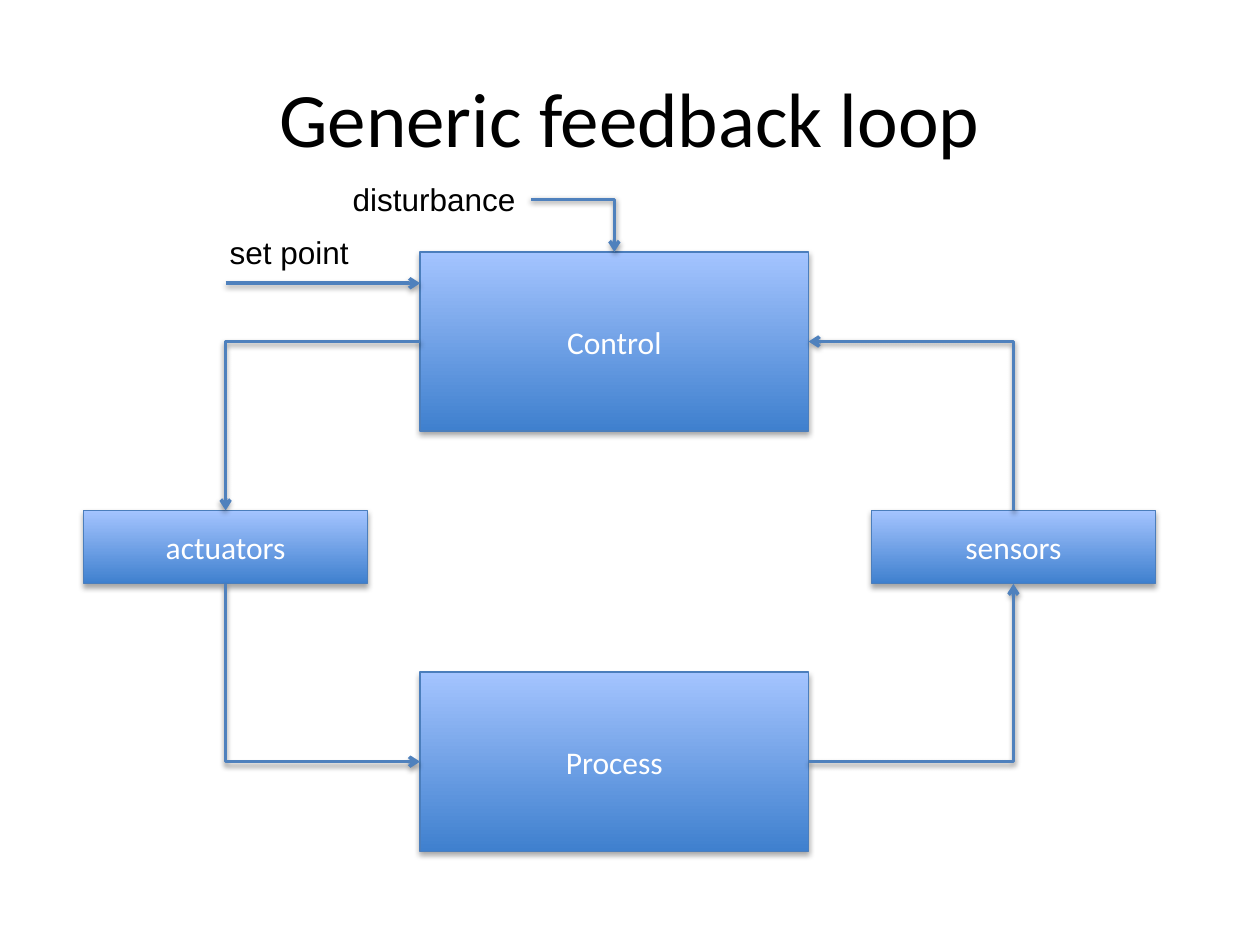
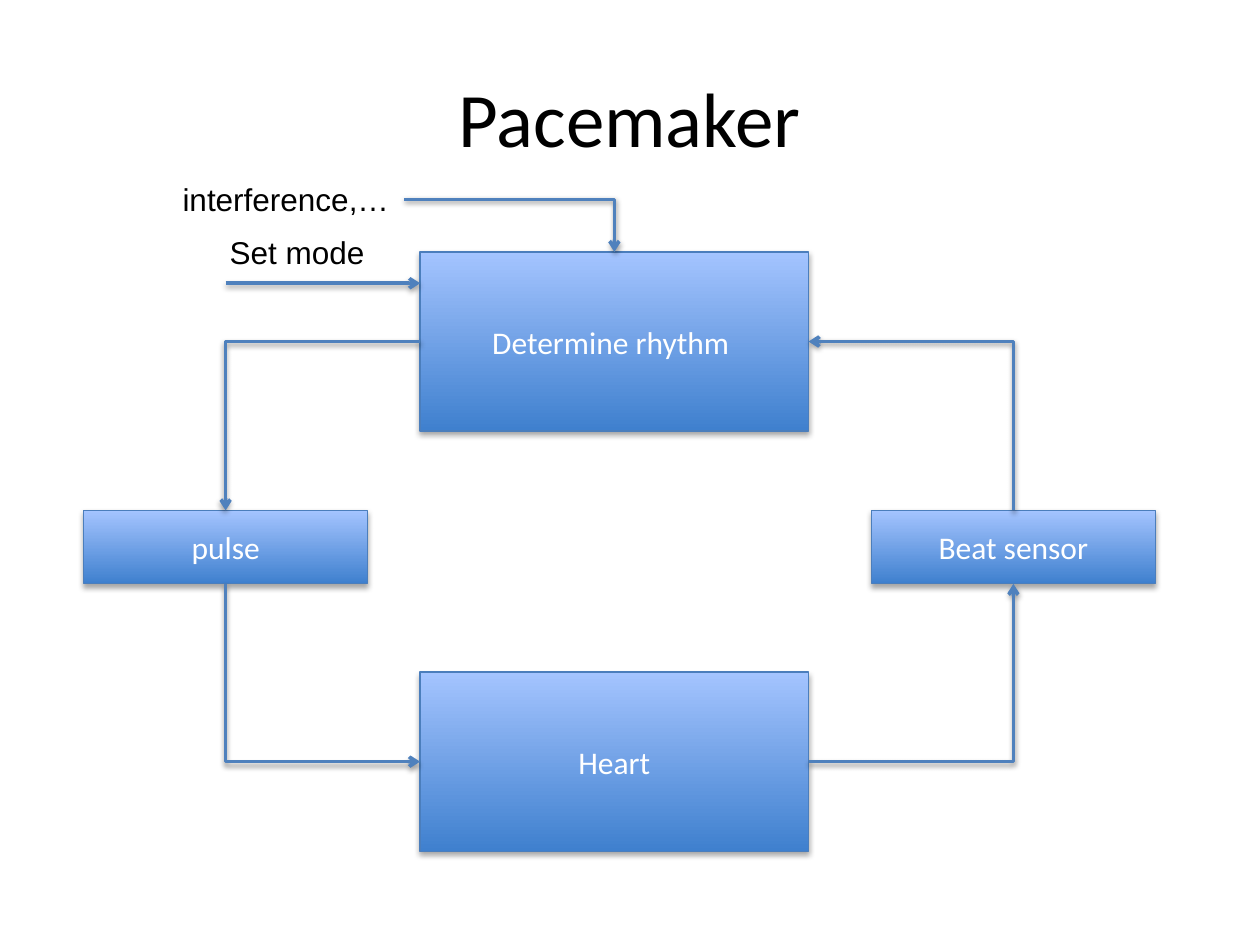
from dataclasses import dataclass

from lxml.etree import SubElement
from pptx import Presentation
from pptx.dml.color import RGBColor as RGB
from pptx.enum.shapes import MSO_CONNECTOR as Link, MSO_SHAPE as Shape
from pptx.enum.text import MSO_ANCHOR as Anchor, MSO_AUTO_SIZE as AutoSize, PP_ALIGN as Align
from pptx.oxml.ns import qn
from pptx.util import Cm, Pt


@dataclass(frozen=True)
class Theme:
    ink: RGB = RGB(0, 0, 0)
    box_text: RGB = RGB(255, 255, 255)
    box_bottom: RGB = RGB.from_string("3F80CE")
    box_top: RGB = RGB.from_string("A4C4FF")
    box_line: RGB = RGB.from_string("4B7EBC")
    arrow: RGB = RGB.from_string("4F81BD")
    heading_font: str = "Calibri"
    label_font: str = "Arial"
    title_size: Pt = Pt(44)
    text_size: Pt = Pt(18)


theme = Theme()
TOP, LEFT, BOTTOM, RIGHT = range(4)


def write(shape, text, font, size, color, align=Align.LEFT, anchor=Anchor.TOP):
    frame = shape.text_frame
    frame.vertical_anchor = anchor
    frame.word_wrap = True
    paragraph = frame.paragraphs[0]
    paragraph.text = text
    paragraph.alignment = align
    paragraph.font.name = font
    paragraph.font.size = size
    paragraph.font.color.rgb = color
    return frame


def add_shadow(properties, distance, opacity):
    effects = properties.find(qn("a:effectLst"))
    if effects is None:
        effects = SubElement(properties, qn("a:effectLst"))
    shadow = SubElement(effects, qn("a:outerShdw"), blurRad="40000", dist=str(distance),
                        dir="5400000", rotWithShape="0")
    color = SubElement(shadow, qn("a:srgbClr"), val="000000")
    SubElement(color, qn("a:alpha"), val=str(opacity * 1000))


box_places = {
    "process": (8.47, 13.55, 7.83, 3.61),
    "control": (8.47, 5.08, 7.83, 3.61),
    "actuators": (1.69, 10.29, 5.72, 1.48),
    "sensors": (17.57, 10.29, 5.72, 1.48),
}

loop_links = [
    ("control", LEFT, "actuators", TOP, "tailEnd"),
    ("process", LEFT, "actuators", BOTTOM, "headEnd"),
    ("process", RIGHT, "sensors", BOTTOM, "tailEnd"),
    ("control", RIGHT, "sensors", TOP, "headEnd"),
]

loops = [
    {
        "title": "Generic feedback loop",
        "boxes": {"process": "Process", "control": "Control",
                  "actuators": "actuators", "sensors": "sensors"},
        "set_point": ("set point", 2.95),
        "disturbance": ("disturbance", 6.86, 3.84),
    },
    {
        "title": "Pacemaker",
        "boxes": {"process": "Heart", "control": "Determine rhythm ",
                  "actuators": "pulse", "sensors": "Beat sensor"},
        "set_point": ("Set mode", 3.25),
        "disturbance": ("interference,…", 3.43, 4.72),
    },
]

deck = Presentation()
deck.slide_width, deck.slide_height = Cm(25.4), Cm(19.05)

for loop in loops:
    slide = deck.slides.add_slide(deck.slide_layouts[6])
    shapes = slide.shapes

    title = shapes.add_textbox(Cm(1.27), Cm(0.76), Cm(22.86), Cm(3.18))
    write(title, loop["title"], theme.heading_font, theme.title_size, theme.ink,
          Align.CENTER, Anchor.MIDDLE)

    boxes = {}
    for part, text in loop["boxes"].items():
        box = shapes.add_shape(Shape.RECTANGLE, *map(Cm, box_places[part]))
        box.fill.gradient()
        box.fill.gradient_angle = 90
        for stop, color in zip(box.fill.gradient_stops, (theme.box_bottom, theme.box_top)):
            stop.color.rgb = color
        box.line.color.rgb = theme.box_line
        box.line.width = Pt(0.75)
        box.shadow.inherit = False
        add_shadow(box._element.spPr, 23000, 35)
        write(box, text, theme.heading_font, theme.text_size, theme.box_text,
              Align.CENTER, Anchor.MIDDLE)
        boxes[part] = box

    arrows = []
    for start, start_side, end, end_side, arrow_end in loop_links:
        arrow = shapes.add_connector(Link.ELBOW, 0, 0, 0, 0)
        arrow.begin_connect(boxes[start], start_side)
        arrow.end_connect(boxes[end], end_side)
        arrows.append((arrow, arrow_end, True))

    control, actuators = boxes["control"], boxes["actuators"]
    set_point_arrow = shapes.add_connector(
        Link.STRAIGHT, actuators.left + actuators.width // 2, Cm(5.71), control.left, Cm(5.71))
    arrows.append((set_point_arrow, "tailEnd", False))

    set_point, set_point_width = loop["set_point"]
    disturbance, disturbance_left, disturbance_width = loop["disturbance"]
    for text, left, top, width in [
        (set_point, 4.38, 4.57, set_point_width),
        (disturbance, disturbance_left, 3.5, disturbance_width),
    ]:
        label = shapes.add_textbox(Cm(left), Cm(top), Cm(width), Cm(1.02))
        frame = write(label, text, theme.label_font, theme.text_size, theme.ink)
        frame.word_wrap = False
        frame.auto_size = AutoSize.SHAPE_TO_FIT_TEXT

    disturbance_arrow = shapes.add_connector(
        Link.ELBOW, Cm(disturbance_left + disturbance_width), Cm(4.02), 0, 0)
    disturbance_arrow.end_connect(control, TOP)
    arrows.append((disturbance_arrow, "tailEnd", True))

    for arrow, arrow_end, is_bent in arrows:
        arrow.line.color.rgb = theme.arrow
        arrow.line.width = Pt(2)
        properties = arrow._element.spPr
        SubElement(properties.find(qn("a:ln")), qn(f"a:{arrow_end}"), type="arrow")
        add_shadow(properties, 20000, 38)
        if is_bent:
            properties.find(qn("a:prstGeom")).set("prst", "bentConnector2")

deck.save("out.pptx")
